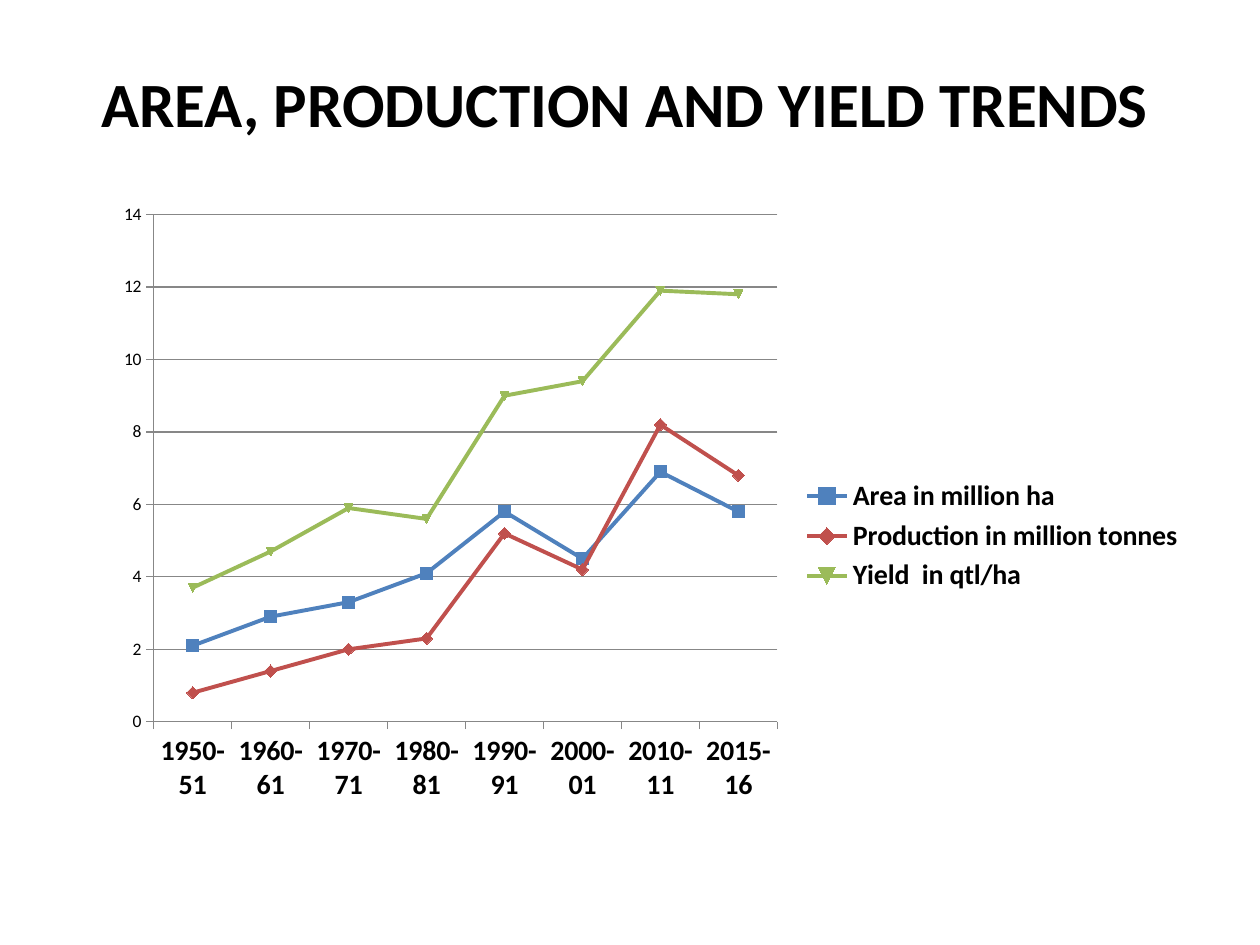
from lxml import etree
from pptx import Presentation
from pptx.chart.data import CategoryChartData
from pptx.dml.color import RGBColor
from pptx.enum.chart import XL_CHART_TYPE as ChartType
from pptx.enum.chart import XL_LEGEND_POSITION as LegendPosition
from pptx.enum.chart import XL_MARKER_STYLE as Marker
from pptx.enum.chart import XL_TICK_MARK as TickMark
from pptx.enum.text import MSO_ANCHOR as Anchor
from pptx.enum.text import PP_ALIGN as Align
from pptx.oxml.ns import qn
from pptx.util import Inches, Pt

COLORS = {
    "text": "000000",
    "grid": "878787",
    "area": "4F81BD",
    "production": "C0504D",
    "yield": "9BBB59",
}
YEARS = ["1950-51", "1960-61", "1970-71", "1980-81",
         "1990-91", "2000-01", "2010-11", "2015-16"]
# Series name, colour, marker, values
TRENDS = [
    ("Area in million ha", "area", Marker.SQUARE,
     [2.1, 2.9, 3.3, 4.1, 5.8, 4.5, 6.9, 5.8]),
    ("Production in million tonnes", "production", Marker.DIAMOND,
     [0.8, 1.4, 2, 2.3, 5.2, 4.2, 8.2, 6.8]),
    ("Yield  in qtl/ha", "yield", None,
     [3.7, 4.7, 5.9, 5.6, 9, 9.4, 11.9, 11.8]),
]


def color(name):
    return RGBColor.from_string(COLORS[name])


class TrendPage:
    font_name = "Calibri"

    def __init__(self, deck):
        self.page = deck.slides.add_slide(deck.slide_layouts[5])

    def style_font(self, font, size, bold=False):
        font.name = self.font_name
        font.size = Pt(size)
        font.bold = bold
        font.color.rgb = color("text")

    def title(self, text, left, top, width, height):
        box = self.page.shapes.title
        box.left, box.top = Inches(left), Inches(top)
        box.width, box.height = Inches(width), Inches(height)
        frame = box.text_frame
        frame.text = text
        frame.vertical_anchor = Anchor.MIDDLE
        para = frame.paragraphs[0]
        para.alignment = Align.CENTER
        self.style_font(para.runs[0].font, 36, bold=True)

    def line_chart(self, categories, trends, left, top, width, height):
        data = CategoryChartData()
        data.categories = categories
        for name, _, _, values in trends:
            data.add_series(name, values)
        chart = self.page.shapes.add_chart(
            ChartType.LINE_MARKERS, Inches(left), Inches(top),
            Inches(width), Inches(height), data).chart
        chart.has_title = False
        self.style_font(chart.font, 10)
        chart.has_legend = True
        chart.legend.position = LegendPosition.RIGHT
        chart.legend.include_in_layout = False
        self.style_font(chart.legend.font, 16, bold=True)
        self.style_axes(chart)
        chart.plots[0].vary_by_categories = False
        for series, (_, tone, marker, _) in zip(chart.plots[0].series, trends):
            self.style_series(series, color(tone), marker)
        return chart

    def style_axes(self, chart):
        for axis in (chart.category_axis, chart.value_axis):
            axis.major_tick_mark = TickMark.OUTSIDE
            axis.minor_tick_mark = TickMark.NONE
            axis.format.line.color.rgb = color("grid")
            axis.format.line.width = Pt(0.75)
        self.style_font(chart.category_axis.tick_labels.font, 16, bold=True)
        values = chart.value_axis
        self.style_font(values.tick_labels.font, 10)
        values.minimum_scale, values.maximum_scale = 0, 14
        values.major_unit = 2
        values.has_major_gridlines = True
        values.major_gridlines.format.line.color.rgb = color("grid")
        values.major_gridlines.format.line.width = Pt(0.75)

    def style_series(self, series, tone, marker):
        series.smooth = False
        series.format.line.color.rgb = tone
        series.format.line.width = Pt(2.25)
        if marker is not None:
            series.marker.style = marker
            series.marker.size = 7
        series.marker.format.fill.solid()
        series.marker.format.fill.fore_color.rgb = tone
        series.marker.format.line.color.rgb = tone

    def place_plot(self, chart, x, y, w, h):
        """Fix the inner plot area, in fractions of the chart."""
        area = chart._chartSpace.chart.plotArea
        for old in area.findall(qn("c:layout")):
            area.remove(old)
        layout = etree.Element(qn("c:layout"))
        area.insert(0, layout)
        manual = etree.SubElement(layout, qn("c:manualLayout"))
        settings = [("layoutTarget", "inner"), ("xMode", "edge"), ("yMode", "edge"),
                    ("x", x), ("y", y), ("w", w), ("h", h)]
        for tag, value in settings:
            etree.SubElement(manual, qn(f"c:{tag}"), val=str(value))


def main():
    deck = Presentation()
    deck.slide_width, deck.slide_height = Inches(10), Inches(7.5)
    trend_page = TrendPage(deck)
    trend_page.title("AREA, PRODUCTION AND YIELD TRENDS", 0.25, 0.3, 9.42, 1.03)
    chart = trend_page.line_chart(YEARS, TRENDS, 0.5, 1.42, 9, 5.67)
    trend_page.place_plot(chart, 0.08, 0.05, 0.55, 0.71)
    deck.save("out.pptx")


if __name__ == "__main__":
    main()
